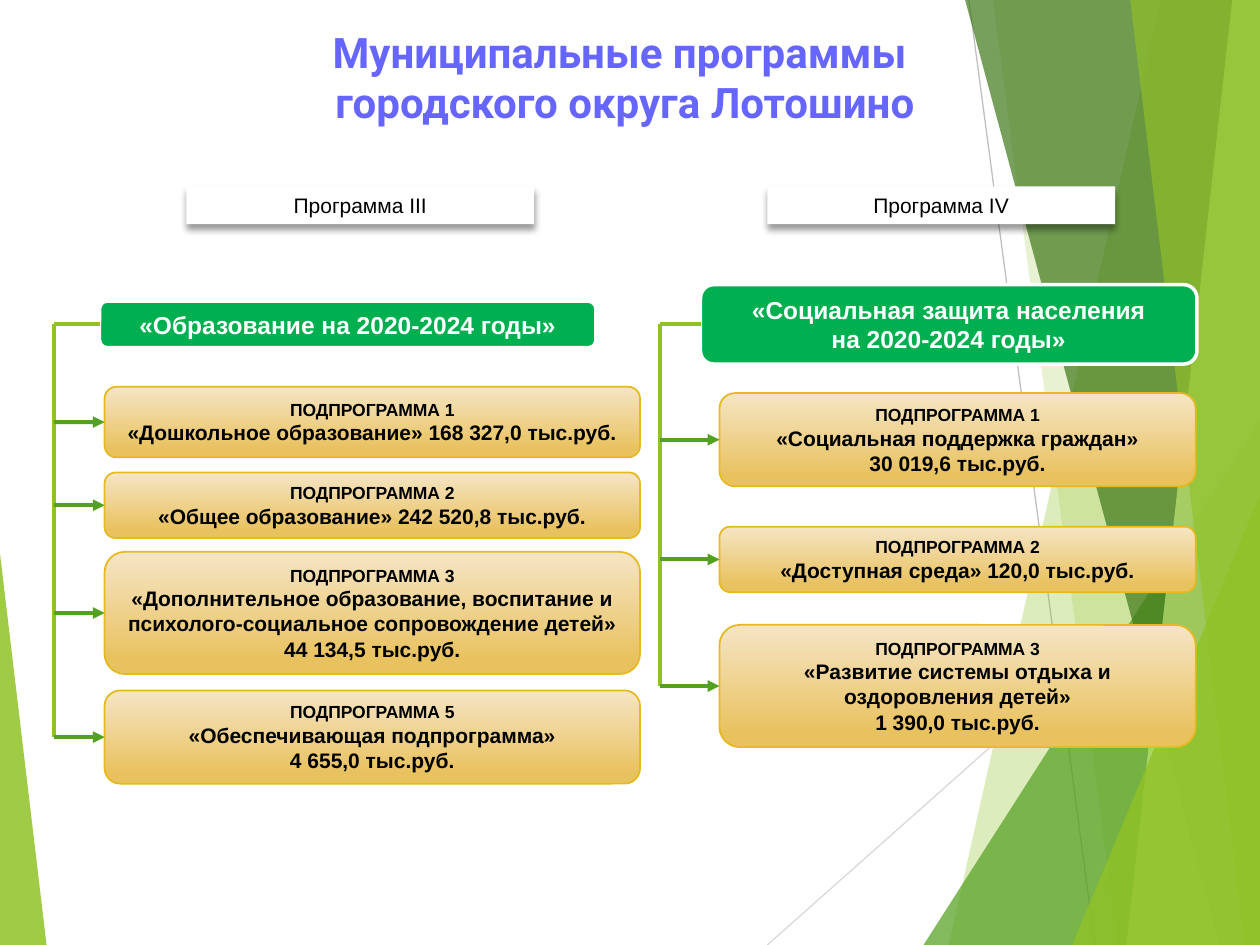
from lxml import etree
from pptx import Presentation
from pptx.dml.color import RGBColor
from pptx.enum.shapes import MSO_CONNECTOR, MSO_SHAPE
from pptx.enum.text import MSO_ANCHOR, MSO_AUTO_SIZE, PP_ALIGN
from pptx.oxml import parse_xml
from pptx.oxml.ns import qn
from pptx.util import Inches, Pt

STRAIGHT = MSO_CONNECTOR.STRAIGHT
RECT, ROUNDED = MSO_SHAPE.RECTANGLE, MSO_SHAPE.ROUNDED_RECTANGLE
TRIANGLE = MSO_SHAPE.ISOSCELES_TRIANGLE
CENTER = PP_ALIGN.CENTER
TOP, MIDDLE = MSO_ANCHOR.TOP, MSO_ANCHOR.MIDDLE
NO_AUTOFIT = MSO_AUTO_SIZE.NONE
LEFT_SIDE = 1

COLORS = {name: RGBColor.from_string(value) for name, value in {
    "title": "6666FF", "white": "FFFFFF", "black": "000000",
    "header": "00B050", "sand": "F5E5C5", "gold": "E9C260", "border": "E6B91E",
    "lime": "90C226", "green": "54A021", "forest": "3F7819", "pale": "C0E474",
    "gray": "BFBFBF", "light gray": "D9D9D9"}.items()}

SHADOW = ('<a:effectLst xmlns:a="http://schemas.openxmlformats.org/drawingml/2006/main">'
          '<a:outerShdw blurRad="50800" dist="38100" dir="5400000" algn="t" rotWithShape="0">'
          '<a:srgbClr val="000000"><a:alpha val="40000"/></a:srgbClr>'
          '</a:outerShdw></a:effectLst>')


def add_box(kind, left, top, width, height, lines, color):
    """Add a shape with centred lines, each given as (text, size, bold)."""
    box = slide.shapes.add_shape(kind, Inches(left), Inches(top), Inches(width), Inches(height))
    box.shadow.inherit = False
    frame = box.text_frame
    frame.word_wrap = True
    frame.vertical_anchor = MIDDLE
    frame.text = "\n".join(text for text, _, _ in lines)
    for paragraph, (_, size, bold) in zip(frame.paragraphs, lines):
        paragraph.alignment = CENTER
        for run in paragraph.runs:
            run.font.name = "Arial"
            run.font.size = Pt(size)
            run.font.bold = bold
            run.font.color.rgb = COLORS[color]
    return box


def add_line(x1, y1, x2, y2, color, width=2.25, arrow=False):
    line = slide.shapes.add_connector(STRAIGHT, Inches(x1), Inches(y1), Inches(x2), Inches(y2))
    line.line.color.rgb = COLORS[color]
    line.line.width = Pt(width)
    if arrow:
        etree.SubElement(line.line._get_or_add_ln(), qn("a:tailEnd"), type="triangle")
    etree.SubElement(line._element.spPr, qn("a:effectLst"))
    return line


presentation = Presentation()
presentation.slide_width, presentation.slide_height = Inches(10), Inches(7.5)
slide = presentation.slides.add_slide(presentation.slide_layouts[5])

# Background facets, back to front: outline points or a triangle's box and apex
add_line(7.69, 0, 8.69, 7.5, "gray", 0.75)
add_line(10, 4.03, 6.09, 7.5, "light gray", 0.75)
facets = [
    ("band", (9.21, 10, 10, 7.53), "lime", 30),
    ("band", (7.88, 10, 10, 8.87), "lime", 20),
    ("triangle", (7.33, 3.33, 2.67, 4.17, 1), "green", 72),
    ("band", (7.66, 10, 10, 9.68), "forest", 70),
    ("band", (9.78, 10, 10, 8.94), "pale", 70),
    ("band", (8.97, 10, 10, 9.88), "lime", 65),
    ("triangle", (8.51, 3.93, 1.49, 3.57, 1), "lime", 80),
    ("triangle", (0, 4.39, 0.37, 3.11, 0), "lime", 85),
]
for outline, numbers, color, opacity in facets:
    if outline == "band":
        start, *corners = [(Inches(x), Inches(y)) for x, y in zip(numbers, (0, 0, 7.5, 7.5))]
        builder = slide.shapes.build_freeform(*start)
        builder.add_line_segments(corners, close=True)
        facet = builder.convert_to_shape()
    else:
        *bounds, apex = numbers
        facet = slide.shapes.add_shape(TRIANGLE, *[Inches(n) for n in bounds])
        facet.adjustments[0] = apex
    facet.shadow.inherit = False
    facet.line.fill.background()
    facet.fill.solid()
    facet.fill.fore_color.rgb = COLORS[color]
    rgb = facet._element.spPr.find(qn("a:solidFill")).find(qn("a:srgbClr"))
    etree.SubElement(rgb, qn("a:alpha"), val=str(opacity * 1000))

# Title
title = slide.shapes.title
title.left, title.top, title.width, title.height = [Inches(n) for n in (0.47, 0.16, 8.98, 0.86)]
title.text_frame.text = "Муниципальные программы \vгородского округа Лотошино"
title.text_frame.auto_size = NO_AUTOFIT
title.text_frame.vertical_anchor = TOP
title.text_frame.paragraphs[0].alignment = CENTER
for run in title.text_frame.paragraphs[0].runs:
    run.font.name = "Roboto"
    run.font.size = Pt(24)
    run.font.bold = True
    run.font.color.rgb = COLORS["title"]

# Programmes: label, header (left, top, height, text), trunk x,
# subprogrammes (left, width) and their rows (number, top, height, lines)
programmes = [
    ("Программа III", 1.48, (0.79, 2.39, 0.37, "«Образование на 2020-2024 годы»"),
     0.43, (0.83, 4.25), [
         (1, 3.07, 0.56, ["«Дошкольное образование» 168 327,0 тыс.руб."]),
         (2, 3.75, 0.52, ["«Общее образование» 242 520,8 тыс.руб."]),
         (3, 4.38, 0.97, ["«Дополнительное образование, воспитание и "
                          "психолого-социальное сопровождение детей»",
                          "44 134,5 тыс.руб."]),
         (5, 5.48, 0.74, ["«Обеспечивающая подпрограмма»", "4 655,0 тыс.руб."])]),
    ("Программа IV", 6.09, (5.56, 2.26, 0.63, "«Социальная защита населения\vна 2020-2024 годы»"),
     5.24, (5.71, 3.78), [
         (1, 3.12, 0.74, ["«Социальная поддержка граждан»", "30 019,6 тыс.руб."]),
         (2, 4.18, 0.52, ["«Доступная среда» 120,0 тыс.руб."]),
         (3, 4.96, 0.97, ["«Развитие системы отдыха и оздоровления детей»",
                          "1 390,0 тыс.руб."])]),
]
for label, label_left, header, trunk_x, (left, width), rows in programmes:
    # Label with a soft shadow
    label_box = add_box(RECT, label_left, 1.48, 2.76, 0.3, [(label, 12, False)], "black")
    label_box.fill.solid()
    label_box.fill.fore_color.rgb = COLORS["white"]
    label_box.line.fill.background()
    properties = label_box._element.spPr
    properties.replace(properties.find(qn("a:effectLst")), parse_xml(SHADOW))

    # Green header
    header_left, header_top, header_height, name = header
    header_box = add_box(ROUNDED, header_left, header_top, 3.94, header_height,
                         [(name, 14, True)], "white")
    header_box.fill.solid()
    header_box.fill.fore_color.rgb = COLORS["header"]
    header_box.line.color.rgb = COLORS["white"]
    header_box.line.width = Pt(2)

    # Trunk from the header down to the last row
    header_middle = header_top + header_height / 2
    last_middle = rows[-1][1] + rows[-1][2] / 2
    add_line(trunk_x, header_middle, trunk_x, last_middle, "lime")
    arm = add_line(trunk_x, header_middle, header_left, header_middle, "lime")
    arm.end_connect(header_box, LEFT_SIDE)

    # Subprogrammes and their arrows
    for number, top, height, texts in rows:
        lines = [(f"ПОДПРОГРАММА {number}", 10, True)] + [(text, 12, True) for text in texts]
        subprogramme = add_box(ROUNDED, left, top, width, height, lines, "black")
        subprogramme.fill.gradient()
        subprogramme.fill.gradient_angle = 270
        stops = subprogramme.fill.gradient_stops
        for stop, position, color in zip(stops, (0, 0.88), ("sand", "gold")):
            stop.position = position
            stop.color.rgb = COLORS[color]
        subprogramme.line.color.rgb = COLORS["border"]
        subprogramme.line.width = Pt(1)
        middle = top + height / 2
        arrow = add_line(trunk_x, middle, left, middle, "green", arrow=True)
        arrow.end_connect(subprogramme, LEFT_SIDE)

presentation.save("out.pptx")
